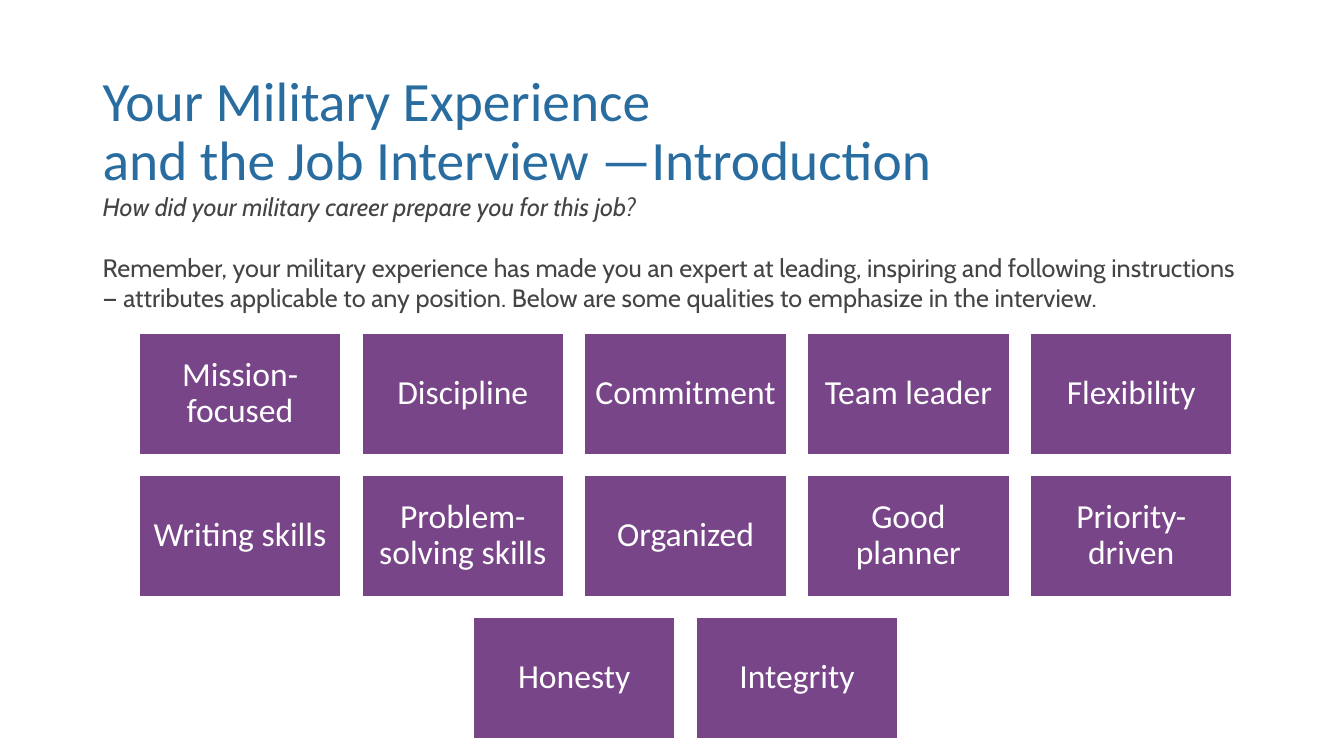
from pptx import Presentation
from pptx.dml.color import RGBColor
from pptx.enum.shapes import MSO_SHAPE as Shape
from pptx.enum.text import MSO_ANCHOR as Anchor, PP_ALIGN as Align
from pptx.util import Inches, Pt

BLUE = RGBColor(0x28, 0x6C, 0xA0)
PURPLE = RGBColor(0x78, 0x45, 0x89)
GRAY = RGBColor(0x44, 0x44, 0x44)
WHITE = RGBColor(0xFF, 0xFF, 0xFF)

TITLE = "Your Military Experience\vand the Job Interview —Introduction"
QUESTION = "How did your military career prepare you for this job?"
ADVICE = (
    "Remember, your military experience has made you an expert at leading, "
    "inspiring and following instructions — attributes applicable to any "
    "position. Below are some qualities to emphasize in the interview."
)
QUALITIES = [
    ["Mission-focused", "Discipline", "Commitment", "Team leader", "Flexibility"],
    ["Writing skills", "Problem-solving skills", "Organized", "Good planner",
     "Priority-driven"],
    ["Honesty", "Integrity"],
]
TILE_WIDTH, TILE_HEIGHT, GAP = 2.01, 1.21, 0.2
GRID_TOP, GRID_CENTER = 3.3, 6.8


def write(para, text, color, **font_format):
    para.text = text
    para.font.color.rgb = color
    for name, value in font_format.items():
        setattr(para.font, name, value)


deck = Presentation()
deck.slide_width, deck.slide_height = Inches(13.33), Inches(7.5)
page = deck.slides.add_slide(deck.slide_layouts[6])

# Title
title = page.shapes.add_textbox(Inches(0.92), Inches(0.4), Inches(11.5), Inches(1.45))
frame = title.text_frame
frame.word_wrap = True
frame.vertical_anchor = Anchor.MIDDLE
frame.margin_top, frame.margin_bottom = Inches(0.39), 0
frame.paragraphs[0].line_spacing = 0.9
write(frame.paragraphs[0], TITLE, BLUE, name="Calibri", size=Pt(39.6))

# Qualities, each row centred on the grid
for row, names in enumerate(QUALITIES):
    row_width = len(names) * (TILE_WIDTH + GAP) - GAP
    top = GRID_TOP + row * (TILE_HEIGHT + GAP)
    for column, name in enumerate(names):
        left = GRID_CENTER - row_width / 2 + column * (TILE_WIDTH + GAP)
        tile = page.shapes.add_shape(
            Shape.RECTANGLE, Inches(left), Inches(top),
            Inches(TILE_WIDTH), Inches(TILE_HEIGHT))
        tile.shadow.inherit = False
        tile.fill.solid()
        tile.fill.fore_color.rgb = PURPLE
        tile.line.color.rgb = WHITE
        tile.line.width = Pt(1.5)
        frame = tile.text_frame
        frame.word_wrap = True
        frame.vertical_anchor = Anchor.MIDDLE
        for side in ("left", "right", "top", "bottom"):
            setattr(frame, f"margin_{side}", Inches(0.1))
        para = frame.paragraphs[0]
        para.alignment = Align.CENTER
        para.line_spacing = 0.9
        write(para, name, WHITE, name="Calibri", size=Pt(24))

# Question and advice
intro = page.shapes.add_textbox(Inches(0.92), Inches(1.85), Inches(11.5), Inches(1.31))
frame = intro.text_frame
frame.word_wrap = True
write(frame.paragraphs[0], QUESTION, GRAY, name="Cabin", size=Pt(18), italic=True)
advice = frame.add_paragraph()
advice.space_before = Pt(22)
write(advice, ADVICE, GRAY, name="Cabin", size=Pt(18))

deck.save("out.pptx")
